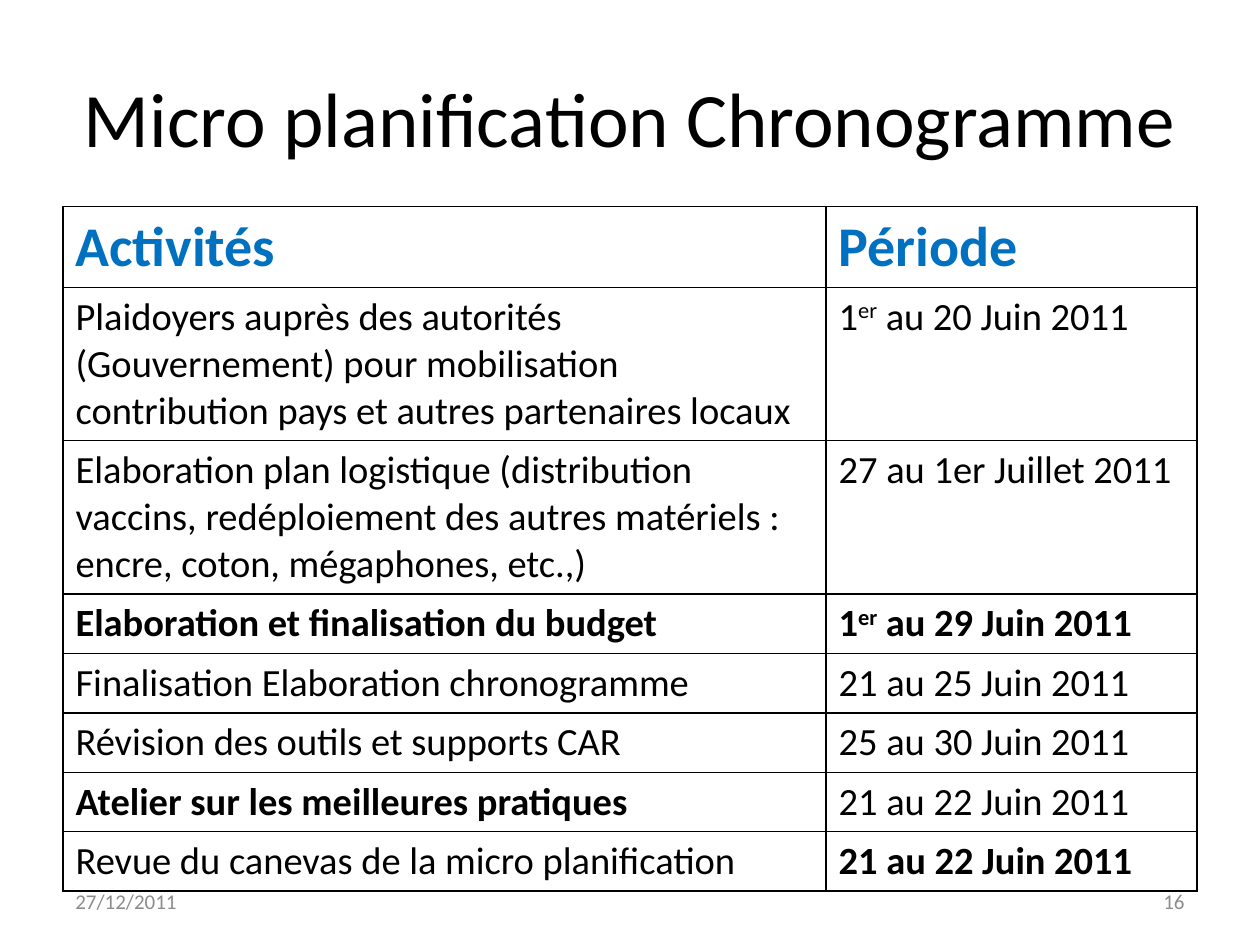
from lxml import etree
from pptx import Presentation
from pptx import util as u
from pptx.dml.color import RGBColor
from pptx.enum import text
from pptx.oxml import ns

BLACK = RGBColor(0x00, 0x00, 0x00)
WHITE = RGBColor(0xFF, 0xFF, 0xFF)
BLUE = RGBColor(0x00, 0x70, 0xC0)
GRAY = RGBColor(0x8C, 0x8C, 0x8C)
FONT = "Calibri"
WIDTH, HEIGHT = u.Inches(10), u.Inches(7.5)
MARGIN = 0.05
CONTENT = 1 - 2 * MARGIN
FOOTER_WIDTH = 0.233
ACTIVITY_SHARE = 0.673
ROW_HEIGHT = u.Inches(0.41)

HEADINGS = ("Activités", "Période")
SCHEDULE = [
    ("Plaidoyers auprès des autorités (Gouvernement) pour mobilisation contribution pays "
     "et autres partenaires locaux", False, ("1", "er", " au 20 Juin 2011"), False),
    ("Elaboration plan logistique (distribution vaccins, redéploiement des autres "
     "matériels : encre, coton, mégaphones, etc.,)", False, ("27 au 1er Juillet 2011",), False),
    ("Elaboration et finalisation du budget", True, ("1", "er", " au 29 Juin 2011"), True),
    ("Finalisation Elaboration chronogramme", False, ("21 au 25 Juin 2011",), False),
    ("Révision des outils et supports CAR", False, ("25 au 30 Juin 2011",), False),
    ("Atelier sur les meilleures pratiques", True, ("21 au 22 Juin 2011",), False),
    ("Revue du canevas de la micro planification", False, ("21 au 22 Juin 2011",), True),
]
FIRST_CENTRED_ROW = 4


def share_box(left, top, width, height):
    """Turn shares of the slide into a box of lengths."""
    return int(left * WIDTH), int(top * HEIGHT), int(width * WIDTH), int(height * HEIGHT)


def add_run(paragraph, words, size, color, bold=False, raised=False):
    """Append one formatted run to a paragraph."""
    run = paragraph.add_run()
    run.text = words
    run.font.name = FONT
    run.font.size = u.Pt(size)
    run.font.bold = bold
    run.font.color.rgb = color
    if raised:
        run.font._element.set("baseline", "30000")


def set_borders(cell):
    """Draw a thin black line on each side of a cell."""
    properties = cell._tc.get_or_add_tcPr()
    for position, side in enumerate(("a:lnL", "a:lnR", "a:lnT", "a:lnB")):
        line = etree.Element(ns.qn(side), w=str(u.Pt(1)))
        fill = etree.SubElement(line, ns.qn("a:solidFill"))
        etree.SubElement(fill, ns.qn("a:srgbClr"), val=str(BLACK))
        properties.insert(position, line)


def fill_cell(cell, pieces, size, color, bold, centred=False):
    """Write the runs of a cell and set its look."""
    cell.fill.solid()
    cell.fill.fore_color.rgb = WHITE
    set_borders(cell)
    cell.vertical_anchor = text.MSO_ANCHOR.MIDDLE if centred else text.MSO_ANCHOR.TOP
    for index, words in enumerate(pieces):
        add_run(cell.text_frame.paragraphs[0], words, size, color, bold, raised=index == 1)


def place_title(slide, box):
    """Place the title placeholder in its box."""
    title = slide.shapes.title
    title.left, title.top, title.width, title.height = box
    title.text_frame.vertical_anchor = text.MSO_ANCHOR.MIDDLE
    paragraph = title.text_frame.paragraphs[0]
    paragraph.alignment = text.PP_ALIGN.CENTER
    add_run(paragraph, "Micro planification Chronogramme", 44, BLACK)


def place_schedule(slide, box):
    """Place the table of activities and periods in its box."""
    left, top, width, height = box
    table = slide.shapes.add_table(len(SCHEDULE) + 1, 2, left, top, width, height).table
    table.columns[0].width = int(width * ACTIVITY_SHARE)
    table.columns[1].width = width - table.columns[0].width
    for row in table.rows:
        row.height = ROW_HEIGHT
    for column, heading in enumerate(HEADINGS):
        fill_cell(table.cell(0, column), (heading,), 32, BLUE, True)
    for row, (activity, activity_bold, period, period_bold) in enumerate(SCHEDULE, 1):
        fill_cell(table.cell(row, 0), (activity,), 22, BLACK, activity_bold,
                  centred=row >= FIRST_CENTRED_ROW)
        fill_cell(table.cell(row, 1), period, 22, BLACK, period_bold)


def place_footer(slide, box, words, alignment):
    """Place one small grey footer text in its box."""
    frame = slide.shapes.add_textbox(*box).text_frame
    frame.word_wrap = True
    frame.vertical_anchor = text.MSO_ANCHOR.MIDDLE
    paragraph = frame.paragraphs[0]
    paragraph.alignment = alignment
    add_run(paragraph, words, 12, GRAY)


def main():
    """Build and save the schedule slide."""
    presentation = Presentation()
    presentation.slide_width, presentation.slide_height = WIDTH, HEIGHT
    slide = presentation.slides.add_slide(presentation.slide_layouts[5])
    place_title(slide, share_box(MARGIN, 0.04, CONTENT, 1 / 6))
    place_schedule(slide, share_box(MARGIN, 0.2185, CONTENT, 0.437))
    footers = (
        (MARGIN, "27/12/2011", text.PP_ALIGN.LEFT),
        (1 - MARGIN - FOOTER_WIDTH, "16", text.PP_ALIGN.RIGHT),
    )
    for left, words, alignment in footers:
        place_footer(slide, share_box(left, 0.927, FOOTER_WIDTH, 0.053), words, alignment)
    presentation.save("out.pptx")


if __name__ == "__main__":
    main()
